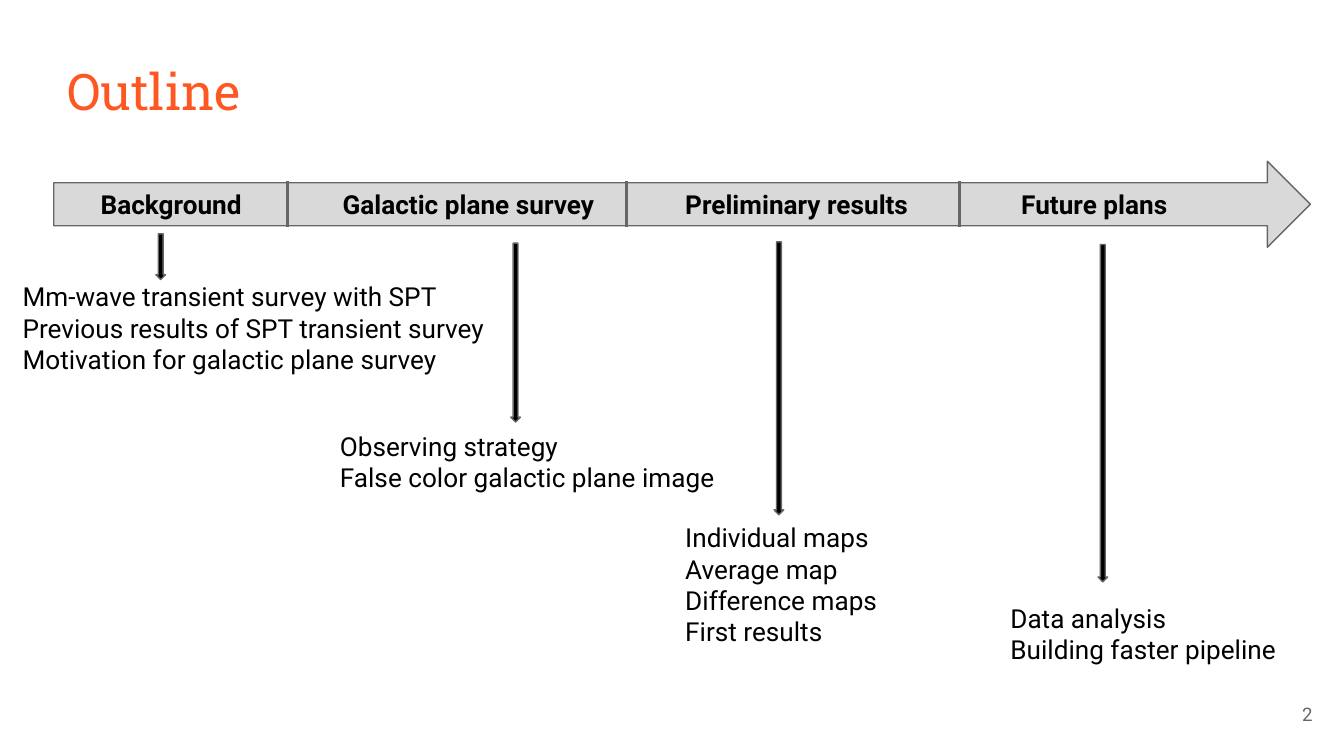
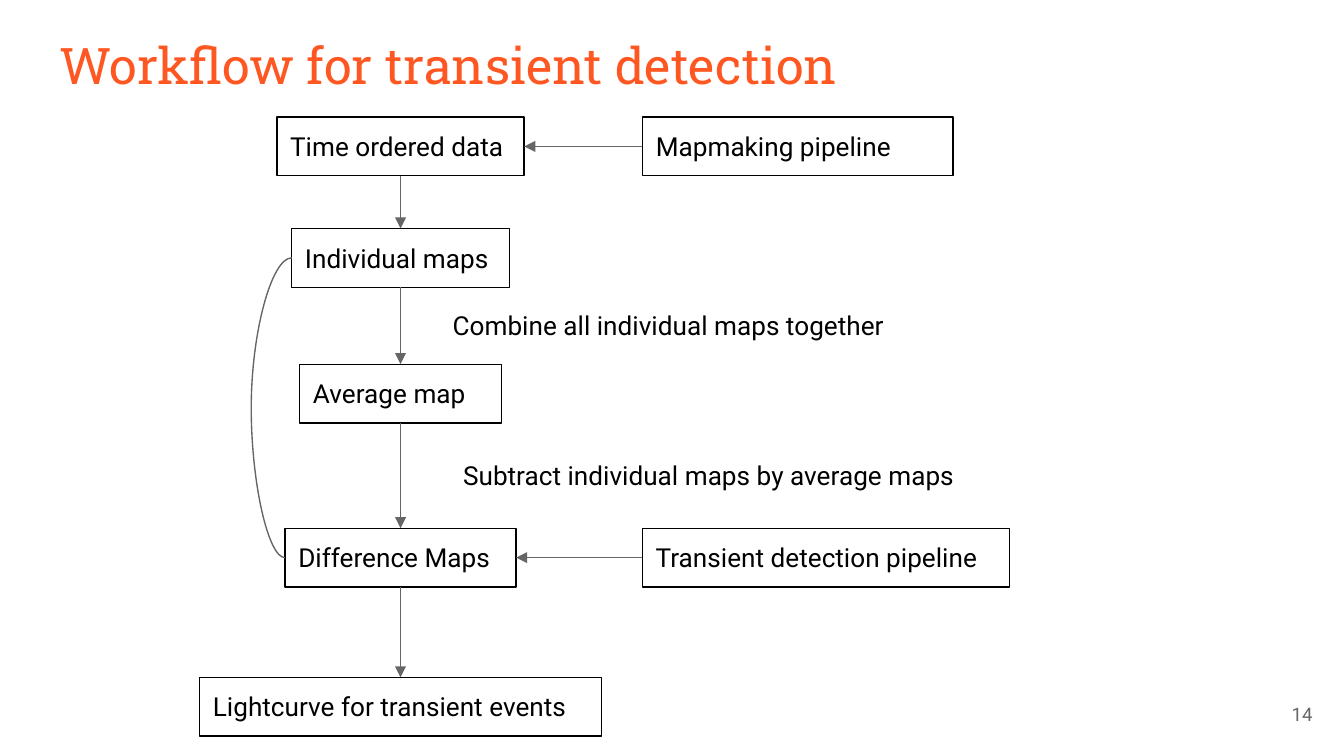
import lxml.etree
import pptx
import pptx.dml.color
import pptx.enum.shapes
import pptx.enum.text
import pptx.oxml.ns
import pptx.util

Pt = pptx.util.Pt
SHAPE = pptx.enum.shapes.MSO_SHAPE
CONNECTOR = pptx.enum.shapes.MSO_CONNECTOR
ALIGN = pptx.enum.text.PP_ALIGN
ANCHOR = pptx.enum.text.MSO_ANCHOR

# Shared style
ORANGE, GRAY, SILVER, BLACK = "FF5722", "666666", "D9D9D9", "000000"
BODY_FONT, TITLE_FONT = "Roboto", "Roboto Slab"
INSET = 7.2
BOX_HEIGHT = 31.5

# Outline: text and places (left, top, width, height)
OUTLINE_TITLE = ("Outline", (28.8, 25.2, 497.5, 49.7))
TIMELINE = (28.8, 86.4, 673.2, 46.1)
LABEL_TOP = 93.6
DIVIDERS = [154.1, 335.5, 514.1]
DIVIDER_TOP, DIVIDER_BOTTOM = 97.2, 121.5
POINTER_WIDTH = 5.2
TOPICS = [
    {"label": "Background", "label_left": 46.8, "label_width": 97.2,
     "pointer": (83.5, 125.3, 24.5), "details_at": (5, 143.3, 267.1, 82.1),
     "details": ["Mm-wave transient survey with SPT",
                 "Previous results of SPT transient survey",
                 "Motivation for galactic plane survey"]},
    {"label": "Galactic plane survey", "label_left": 176.4, "label_width": 150.5,
     "pointer": (273.6, 130.3, 95.8), "details_at": (175, 223.2, 239.8, 48.2),
     "details": ["Observing strategy", "False color galactic plane image"]},
    {"label": "Preliminary results", "label_left": 360, "label_width": 146.2,
     "pointer": (414.7, 129.6, 146.2), "details_at": (360, 272.2, 166.3, 82.1),
     "details": ["Individual maps", "Average map", "Difference maps",
                 "First results"]},
    {"label": "Future plans", "label_left": 540, "label_width": 113.8,
     "pointer": (588.2, 131, 180.7), "details_at": (534.2, 315.4, 160.6, 48.2),
     "details": ["Data analysis", "Building faster pipeline"]},
]

# Workflow: main steps share one centre, pipelines share one left edge
WORKFLOW_TITLE = ("Workflow for transient detection", (24.5, 10.8, 671, 45.4))
STEP_CENTER = 214.6
STEPS = [  # text, top, width
    ("Time ordered data", 62.7, 132.5),
    ("Individual maps", 122.4, 116.6),
    ("Average map", 195.1, 108),
    ("Difference Maps", 283, 123.8),
    ("Lightcurve for transient events", 362.9, 215.3),
]
PIPELINE_LEFT = 344.2
PIPELINES = [  # text, width, step it feeds
    ("Mapmaking pipeline", 166.3, "Time ordered data"),
    ("Transient detection pipeline", 196.6, "Difference Maps"),
]
REMARKS = [  # text, left, top, width
    ("Combine all individual maps together", 235.4, 158.4, 258.5),
    ("Subtract individual maps by average maps", 241, 239, 309.6),
]
CURVE = ("Individual maps", "Difference Maps")
CURVE_REACH = 21.7
TOP, LEFT, BOTTOM, RIGHT = range(4)  # connection sites of a rectangle


def rgb(value):
    return pptx.dml.color.RGBColor.from_string(value)


def points(values):
    return [Pt(value) for value in values]


def write(shape, lines, size=14, color=BLACK, font=BODY_FONT, bold=False,
          align=ALIGN.LEFT, anchor=ANCHOR.TOP):
    frame = shape.text_frame
    frame.text = "\n".join(lines)
    frame.word_wrap = True
    frame.auto_size = pptx.enum.text.MSO_AUTO_SIZE.NONE
    frame.vertical_anchor = anchor
    frame.margin_left = frame.margin_right = Pt(INSET)
    frame.margin_top = frame.margin_bottom = Pt(INSET)
    for para in frame.paragraphs:
        para.alignment = align
        para.space_before = Pt(0)
        for span in para.runs:
            span.font.name = font
            span.font.size = Pt(size)
            span.font.bold = bold
            span.font.color.rgb = rgb(color)


def add_text(page, place, lines, **style):
    write(page.shapes.add_textbox(*points(place)), lines, **style)


def add_box(page, kind, place, fill=None, line=BLACK):
    box = page.shapes.add_shape(kind, *points(place))
    box.shadow.inherit = False
    if fill:
        box.fill.solid()
        box.fill.fore_color.rgb = rgb(fill)
    else:
        box.fill.background()
    box.line.color.rgb = rgb(line)
    box.line.width = Pt(0.75)
    return box


def add_text_box(page, place, text):
    box = add_box(page, SHAPE.RECTANGLE, place)
    write(box, [text])
    return box


def add_line(page, ends, width=0.75, kind=CONNECTOR.STRAIGHT):
    line = page.shapes.add_connector(kind, *points(ends))
    line.line.color.rgb = rgb(GRAY)
    line.line.width = Pt(width)
    properties = line._element.spPr
    lxml.etree.SubElement(properties, pptx.oxml.ns.qn("a:effectLst"))
    return line


def join(page, start, start_site, end, end_site, kind=CONNECTOR.STRAIGHT, head=True):
    line = add_line(page, (0, 0, 0, 0), kind=kind)
    line.begin_connect(start, start_site)
    line.end_connect(end, end_site)
    if head:
        outline = line.line._get_or_add_ln()
        lxml.etree.SubElement(outline, pptx.oxml.ns.qn("a:tailEnd"), type="triangle")
    return line


def add_page(deck, title, number):
    page = deck.slides.add_slide(deck.slide_layouts[5])
    text, place = title
    heading = page.shapes.title
    heading.left, heading.top, heading.width, heading.height = points(place)
    write(heading, [text], size=27, color=ORANGE, font=TITLE_FONT)
    add_text(page, (667.1, 367.2, 43.2, 31), [number], size=10, color=GRAY,
             align=ALIGN.RIGHT, anchor=ANCHOR.MIDDLE)
    return page


def build_outline(deck):
    page = add_page(deck, OUTLINE_TITLE, "2")
    add_box(page, SHAPE.RIGHT_ARROW, TIMELINE, SILVER, GRAY)
    for x in DIVIDERS:
        add_line(page, (x, DIVIDER_TOP, x, DIVIDER_BOTTOM), width=1.5)
    for topic in TOPICS:
        label_at = (topic["label_left"], LABEL_TOP, topic["label_width"], BOX_HEIGHT)
        add_text(page, label_at, [topic["label"]], bold=True)
        add_text(page, topic["details_at"], topic["details"])
        left, top, height = topic["pointer"]
        add_box(page, SHAPE.DOWN_ARROW, (left, top, POINTER_WIDTH, height),
                BLACK, GRAY)


def build_workflow(deck):
    page = add_page(deck, WORKFLOW_TITLE, "14")

    # Main chain of steps
    boxes = {}
    for text, top, width in STEPS:
        place = (STEP_CENTER - width / 2, top, width, BOX_HEIGHT)
        boxes[text] = add_text_box(page, place, text)
    chain = list(boxes.values())
    for upper, lower in zip(chain, chain[1:]):
        join(page, upper, BOTTOM, lower, TOP)

    # Pipelines beside the steps they feed
    for text, width, step in PIPELINES:
        place = (PIPELINE_LEFT, boxes[step].top.pt, width, BOX_HEIGHT)
        join(page, add_text_box(page, place, text), LEFT, boxes[step], RIGHT)

    # Curve that bypasses the average map
    start, end = (boxes[name] for name in CURVE)
    curve = join(page, start, LEFT, end, LEFT, CONNECTOR.CURVE, head=False)
    bend = round(CURVE_REACH / curve.width.pt * 100000)
    guides = curve._element.spPr.prstGeom.get_or_add_avLst()
    lxml.etree.SubElement(guides, pptx.oxml.ns.qn("a:gd"), name="adj1",
                          fmla=f"val {bend}")

    for text, left, top, width in REMARKS:
        add_text(page, (left, top, width, BOX_HEIGHT), [text])


def main():
    deck = pptx.Presentation()
    deck.slide_width, deck.slide_height = Pt(720), Pt(405)
    build_outline(deck)
    build_workflow(deck)
    deck.save("out.pptx")


if __name__ == "__main__":
    main()
